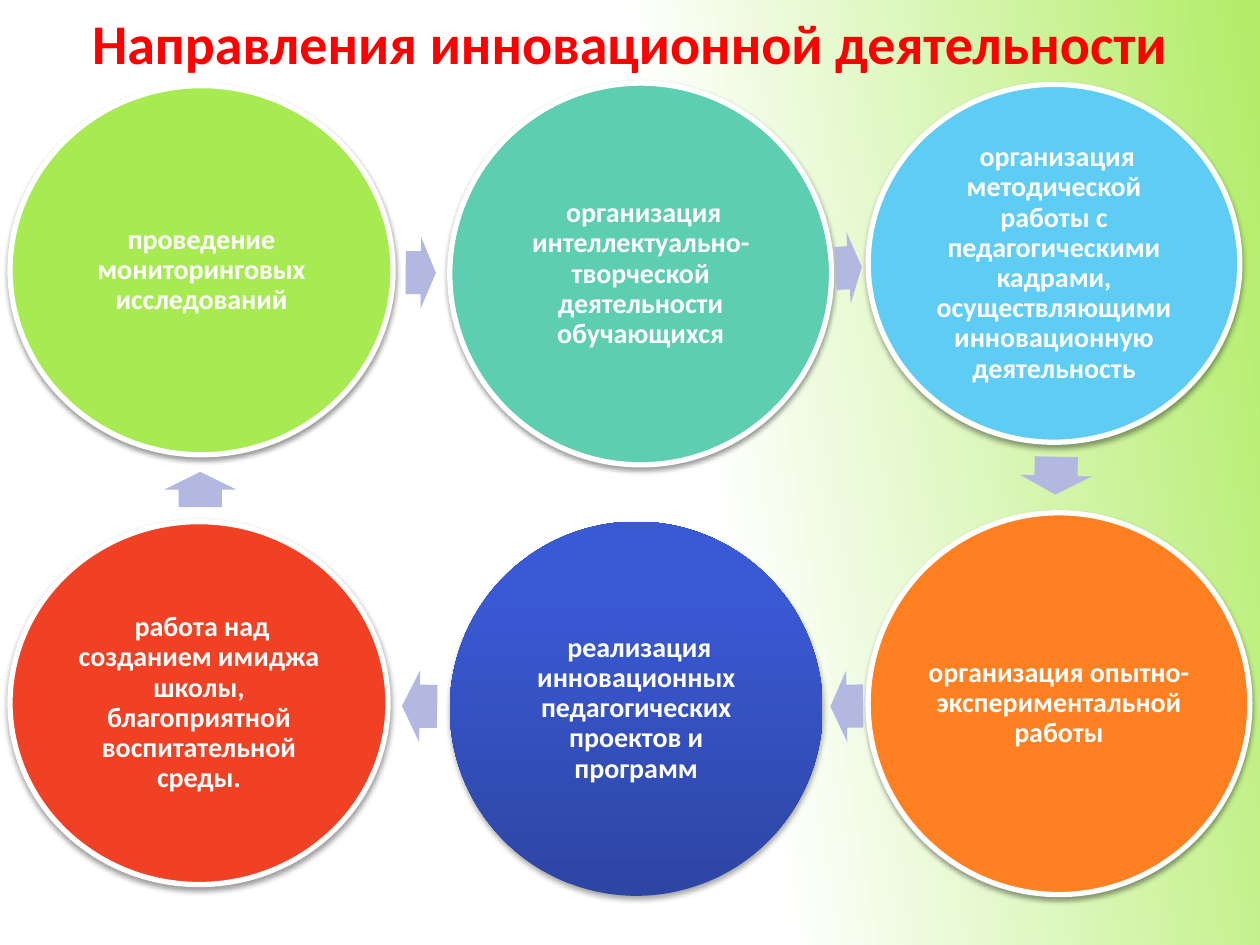
from lxml import etree
from pptx import Presentation
from pptx.dml.color import RGBColor
from pptx.enum.shapes import MSO_SHAPE
from pptx.enum.text import MSO_ANCHOR, MSO_AUTO_SIZE, PP_ALIGN
from pptx.oxml.ns import qn
from pptx.util import Inches, Pt

CENTER = PP_ALIGN.CENTER
MIDDLE = MSO_ANCHOR.MIDDLE
GROW = MSO_AUTO_SIZE.SHAPE_TO_FIT_TEXT
ELLIPSE = MSO_SHAPE.OVAL
ARROW = MSO_SHAPE.RIGHT_ARROW
BLUE_STOPS = [(0, "2D45A3"), (80, "3A59D4"), (100, "3758D7")]
BACKGROUND_STOPS = [(55, "FFFFFF"), (99, "B3ED6A")]


def color(value):
    return RGBColor.from_string(value)


class DirectionsSlide:
    font = "Calibri"
    white = "FFFFFF"
    title_color = "FF0000"
    arrow_color = "B2B8E0"
    inset = Inches(0.02)

    def __init__(self, slide):
        self.slide = slide

    def gradient(self, fill, owner, stops, angle):
        fill.gradient()
        fill.gradient_angle = angle
        stop_list = next(owner.iter(qn("a:gsLst")))
        for old_stop in list(stop_list):
            stop_list.remove(old_stop)
        for position, value in stops:
            stop = etree.SubElement(stop_list, qn("a:gs"), pos=str(position * 1000))
            etree.SubElement(stop, qn("a:srgbClr"), val=value)

    def background(self, stops, angle):
        self.gradient(self.slide.background.fill, self.slide.element, stops, angle)

    def run(self, paragraph, text, size, value, bold=True):
        run = paragraph.add_run()
        run.text = text
        run.font.name = self.font
        run.font.size = Pt(size)
        run.font.bold = bold
        run.font.color.rgb = color(value)

    def shadow(self, shape, opacity, distance):
        shape.shadow.inherit = False
        effects = shape.element.spPr.find(qn("a:effectLst"))
        outer = etree.SubElement(
            effects, qn("a:outerShdw"), blurRad=str(Pt(3.1)),
            dist=str(Pt(distance)), dir="5400000", rotWithShape="0")
        black = etree.SubElement(outer, qn("a:srgbClr"), val="000000")
        etree.SubElement(black, qn("a:alpha"), val=str(opacity * 1000))

    def title(self, text, box):
        heading = self.slide.shapes.add_textbox(*map(Inches, box))
        frame = heading.text_frame
        frame.word_wrap = True
        frame.auto_size = GROW
        paragraph = frame.paragraphs[0]
        paragraph.alignment = CENTER
        self.run(paragraph, text, 32, self.title_color)

    def circle(self, text, box, fill, lead_size=None):
        circle = self.slide.shapes.add_shape(ELLIPSE, *map(Inches, box))
        if isinstance(fill, str):
            circle.fill.solid()
            circle.fill.fore_color.rgb = color(fill)
            circle.line.color.rgb = color(self.white)
            circle.line.width = Pt(3)
            self.shadow(circle, 38, 1.6)
        else:
            self.gradient(circle.fill, circle.element.spPr, fill, 90)
            circle.line.fill.background()
            self.shadow(circle, 35, 1.8)
        frame = circle.text_frame
        frame.word_wrap = True
        frame.vertical_anchor = MIDDLE
        frame.margin_left = frame.margin_right = self.inset
        frame.margin_top = frame.margin_bottom = self.inset
        paragraph = frame.paragraphs[0]
        paragraph.alignment = CENTER
        paragraph.line_spacing = 0.9
        if lead_size:
            self.run(paragraph, " ", lead_size, self.white, bold=False)
        self.run(paragraph, text, 16, self.white)

    def arrow(self, left, top, length, rotation):
        arrow = self.slide.shapes.add_shape(
            ARROW, Inches(left), Inches(top), Inches(length), Inches(0.57))
        arrow.adjustments[0] = 0.6
        arrow.adjustments[1] = 0.5
        arrow.rotation = rotation
        arrow.fill.solid()
        arrow.fill.fore_color.rgb = color(self.arrow_color)
        arrow.line.fill.background()
        arrow.shadow.inherit = False


def main():
    presentation = Presentation()
    presentation.slide_width = Inches(10)
    presentation.slide_height = Inches(7.5)
    page = DirectionsSlide(presentation.slides.add_slide(presentation.slide_layouts[6]))
    page.background(BACKGROUND_STOPS, 10)
    page.title("Направления инновационной деятельности", (0, 0.02, 10, 0.64))

    directions = [
        ("организация интеллектуально-творческой деятельности обучающихся",
         (3.57, 0.66, 3.03, 3.03), "5DCEAF", 16),
        ("организация методической работы с педагогическими кадрами, "
         "осуществляющими инновационную деятельность",
         (6.89, 0.67, 2.95, 2.84), "5ECCF3", 16),
        ("организация опытно-экспериментальной работы",
         (6.89, 4.07, 3.03, 3.03), "FF8021", None),
        ("реализация инновационных педагогических проектов и программ",
         (3.57, 4.14, 2.96, 2.97), BLUE_STOPS, 16),
        ("работа над созданием имиджа школы, благоприятной воспитательной среды.",
         (0.08, 4.14, 3, 2.88), "F14124", 15),
        ("проведение мониторинговых исследований",
         (0.08, 0.68, 3.04, 2.93), "A7EA52", None),
    ]
    transitions = [
        (6.63, 1.84, 0.21, 356.6),
        (8.23, 3.49, 0.3, 91.3),
        (6.59, 5.32, 0.26, 179.1),
        (3.19, 5.32, 0.28, 180.8),
        (1.45, 3.6, 0.28, 270),
        (3.22, 1.88, 0.24, 0.4),
    ]
    for direction, transition in zip(directions, transitions):
        page.circle(*direction)
        page.arrow(*transition)

    presentation.save("out.pptx")


if __name__ == "__main__":
    main()
